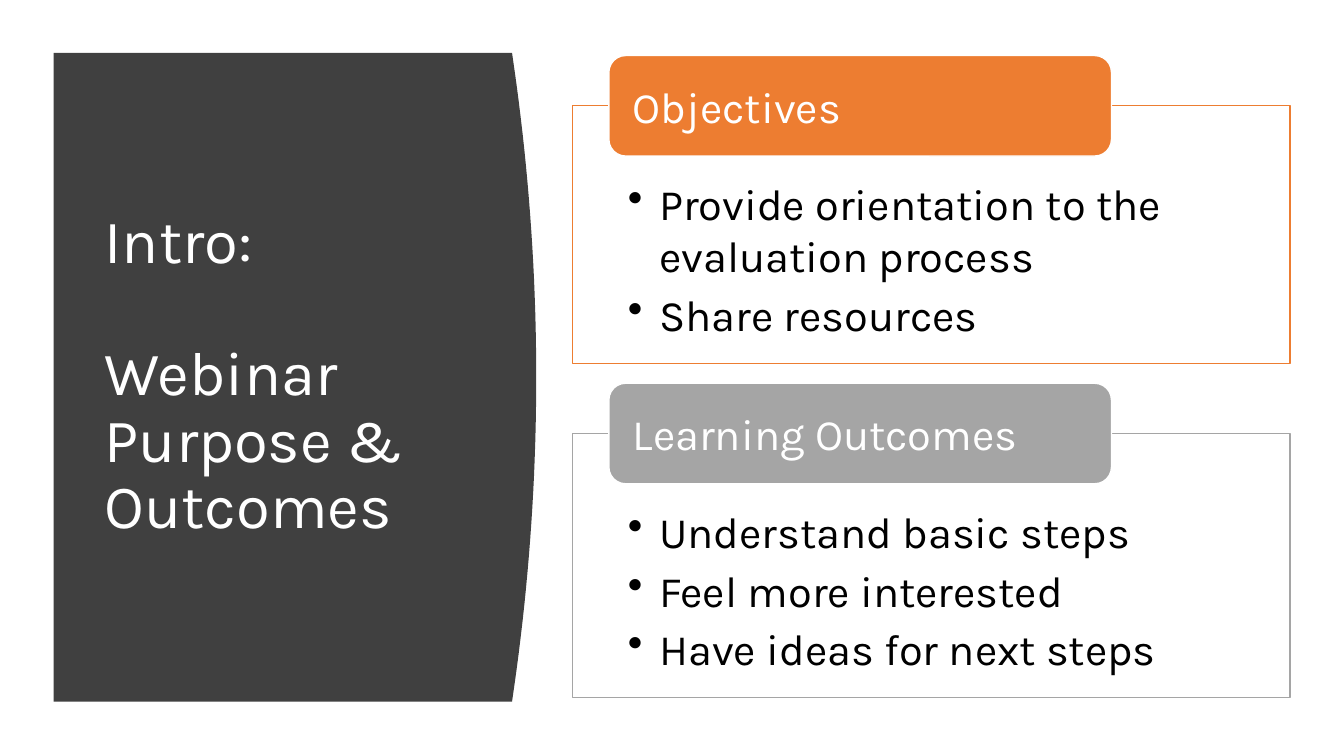
from lxml.etree import SubElement
from pptx import Presentation
from pptx.dml.color import RGBColor
from pptx.enum.shapes import MSO_SHAPE as Preset
from pptx.enum.text import MSO_ANCHOR as Anchor, PP_ALIGN as Align
from pptx.oxml.ns import qn
from pptx.util import Inches, Pt

WIDTH, HEIGHT = 13.33, 7.5
WHITE, BLACK, CHARCOAL = "FFFFFF", "000000", "404040"
BOX_LEFT, BOX_WIDTH = 42.6, 53.4
TAB_LEFT, TAB_WIDTH, TAB_HEIGHT = 45.3, 37.4, 13.3
SECTIONS = [
    ("Objectives", "ED7D31", 14, 34.1,
     ["Provide orientation to the evaluation process", "Share resources"]),
    ("Learning Outcomes", "A5A5A5", 57.35, 34.9,
     ["Understand basic steps", "Feel more interested", "Have ideas for next steps"]),
]


def color(value):
    return RGBColor.from_string(value)


def columns(count):
    return Inches(WIDTH * count / 100)


def rows(count):
    return Inches(HEIGHT * count / 100)


class SlideBuilder:
    font_name = "Karla"
    title_size = 44
    body_size = 31
    bullet_indent = Inches(0.31)

    def __init__(self, slide):
        self.shapes = slide.shapes

    def paint(self, shape, fill, line=None):
        shape.shadow.inherit = False
        shape.fill.solid()
        shape.fill.fore_color.rgb = color(fill)
        if line:
            shape.line.color.rgb = color(line)
            shape.line.width = Pt(1)
        else:
            shape.line.fill.background()

    def fill_text(self, shape, texts, size, text_color, anchor, insets):
        frame = shape.text_frame
        frame.word_wrap = True
        frame.vertical_anchor = anchor
        (frame.margin_left, frame.margin_top,
         frame.margin_right, frame.margin_bottom) = map(Inches, insets)
        for index, text in enumerate(texts):
            paragraph = frame.add_paragraph() if index else frame.paragraphs[0]
            paragraph.text = text
            paragraph.alignment = Align.LEFT
            paragraph.font.name = self.font_name
            paragraph.font.size = Pt(size)
            paragraph.font.color.rgb = color(text_color)
        return frame.paragraphs

    def curved_panel(self, left, top, right, height, bulge, fill, steps=40):
        curve = []
        for step in range(steps + 1):
            share = step / steps
            depth = 1 - (2 * share - 1) ** 2
            curve.append((columns(right + bulge * depth), rows(top + height * share)))
        builder = self.shapes.build_freeform(columns(left), rows(top))
        builder.add_line_segments(curve + [(columns(left), rows(top + height))])
        self.paint(builder.convert_to_shape(), fill)

    def title(self, left, top, width, height, texts):
        box = self.shapes.add_textbox(columns(left), rows(top), columns(width), rows(height))
        paragraphs = self.fill_text(box, texts, self.title_size, WHITE,
                                    Anchor.MIDDLE, (0.1, 0.05, 0.1, 0.05))
        for paragraph in paragraphs:
            paragraph.line_spacing = 0.9
        paragraphs[0].space_after = Pt(47)

    def bullet_box(self, left, top, width, height, texts, line):
        box = self.shapes.add_shape(Preset.RECTANGLE, columns(left), rows(top),
                                    columns(width), rows(height))
        self.paint(box, WHITE, line)
        fill_color = box.fill._xPr.find(qn("a:solidFill"))[0]
        SubElement(fill_color, qn("a:alpha"), val="90000")
        paragraphs = self.fill_text(box, texts, self.body_size, BLACK,
                                    Anchor.TOP, (0.55, 0.71, 0.55, 0.24))
        for paragraph in paragraphs:
            paragraph.space_after = Pt(0.15 * self.body_size)
            properties = paragraph._p.get_or_add_pPr()
            properties.set("marL", str(self.bullet_indent))
            properties.set("indent", str(-self.bullet_indent))
            bullet = SubElement(properties, qn("a:buChar"), char="•")
            properties.find(qn("a:defRPr")).addprevious(bullet)

    def tab(self, left, top, width, height, text, fill):
        shape = self.shapes.add_shape(Preset.ROUNDED_RECTANGLE, columns(left), rows(top),
                                      columns(width), rows(height))
        self.paint(shape, fill, WHITE)
        self.fill_text(shape, [text], self.body_size, WHITE, Anchor.MIDDLE, (0.19, 0, 0.19, 0))


def main():
    presentation = Presentation()
    presentation.slide_width = Inches(WIDTH)
    presentation.slide_height = Inches(HEIGHT)
    builder = SlideBuilder(presentation.slides.add_slide(presentation.slide_layouts[6]))

    builder.curved_panel(4, 7, 38.1, 85.8, 1.8, CHARCOAL)
    builder.title(7.05, 14.8, 28.05, 69.9, ["Intro:", "Webinar Purpose & Outcomes"])
    for heading, accent, top, height, points in SECTIONS:
        builder.bullet_box(BOX_LEFT, top, BOX_WIDTH, height, points, accent)
        builder.tab(TAB_LEFT, top - TAB_HEIGHT / 2, TAB_WIDTH, TAB_HEIGHT, heading, accent)

    presentation.save("out.pptx")


if __name__ == "__main__":
    main()
